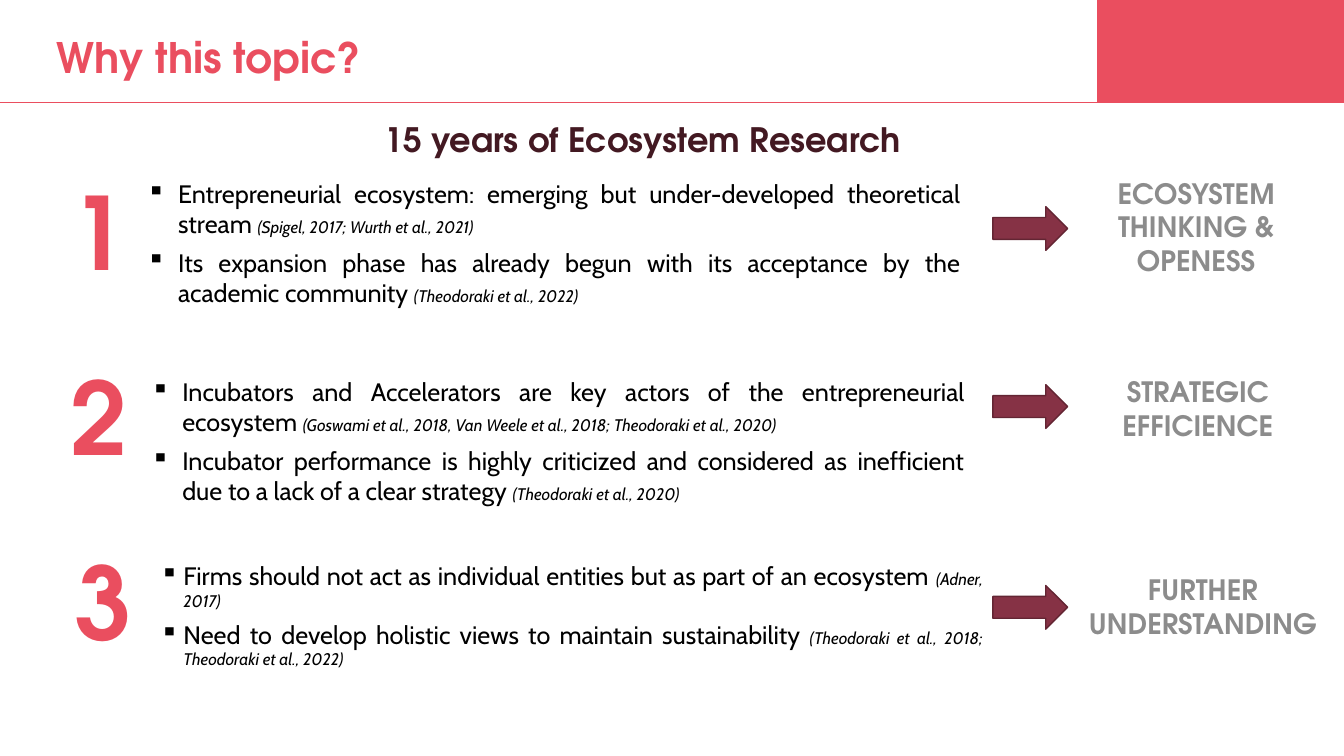
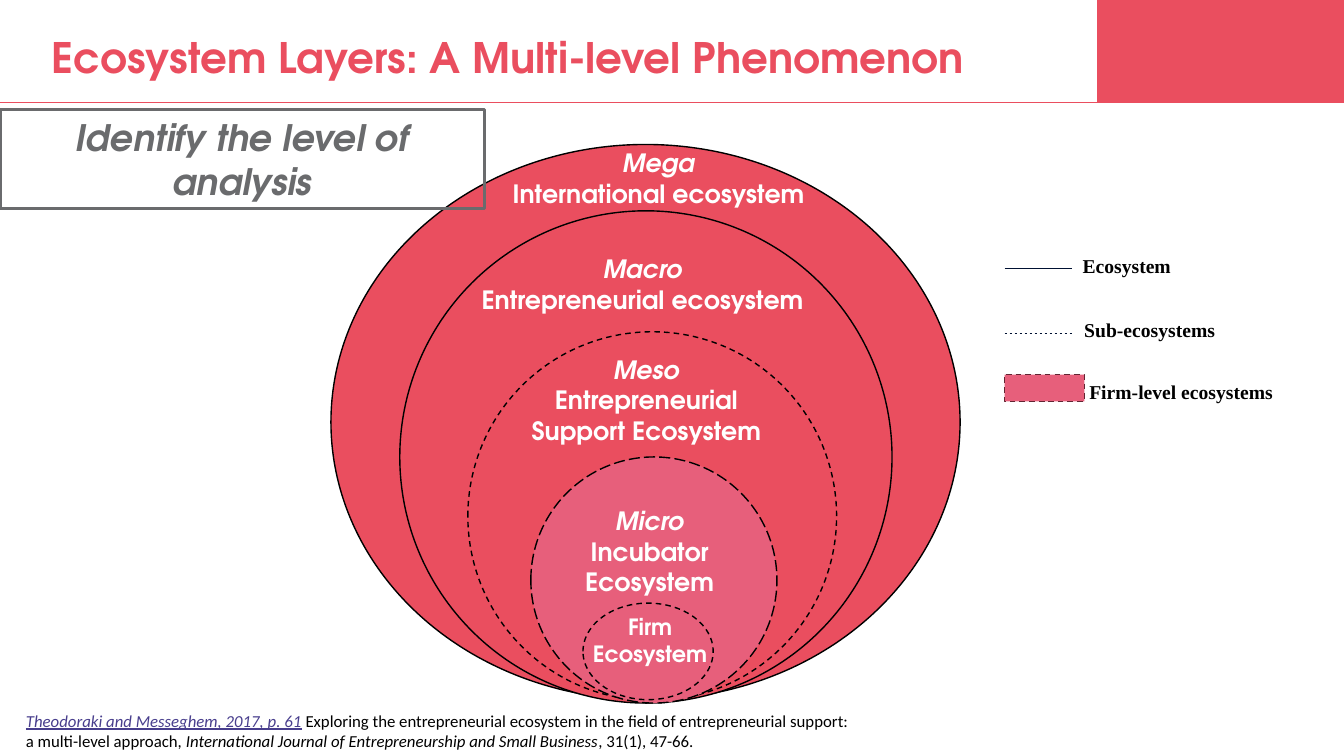
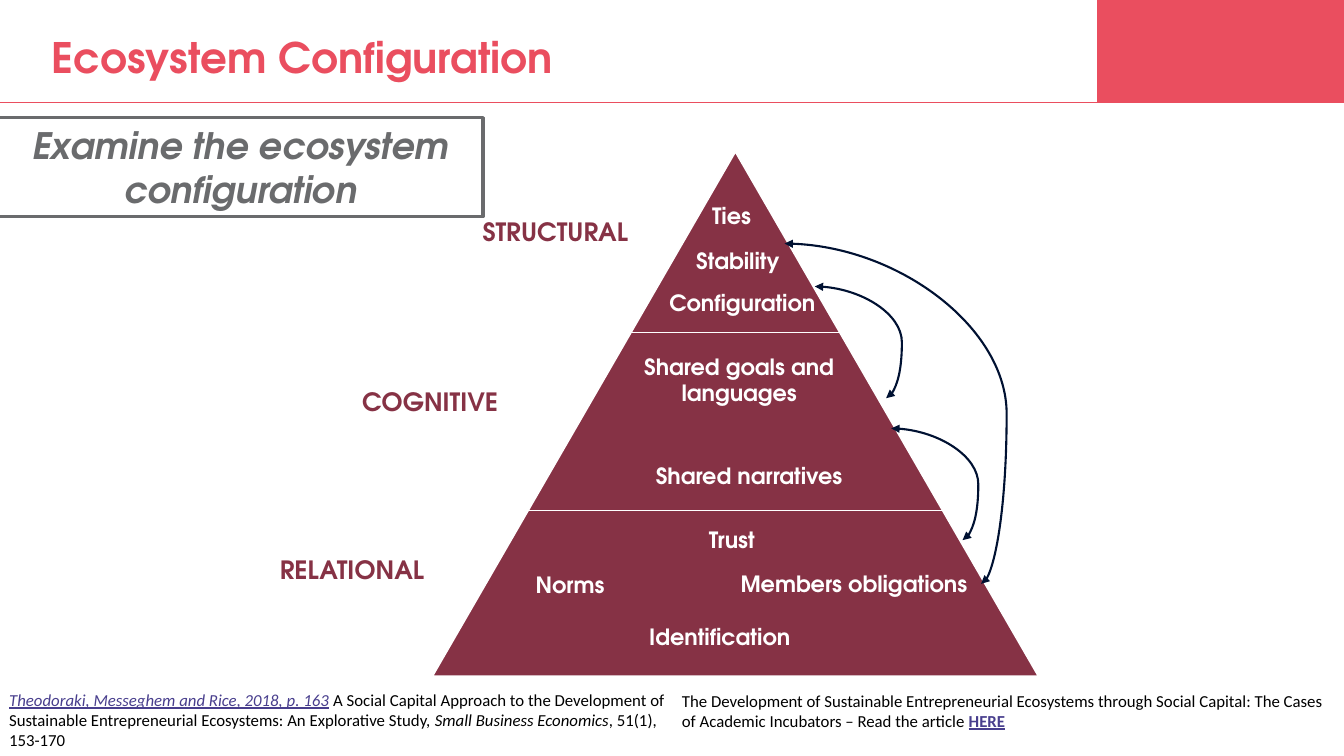
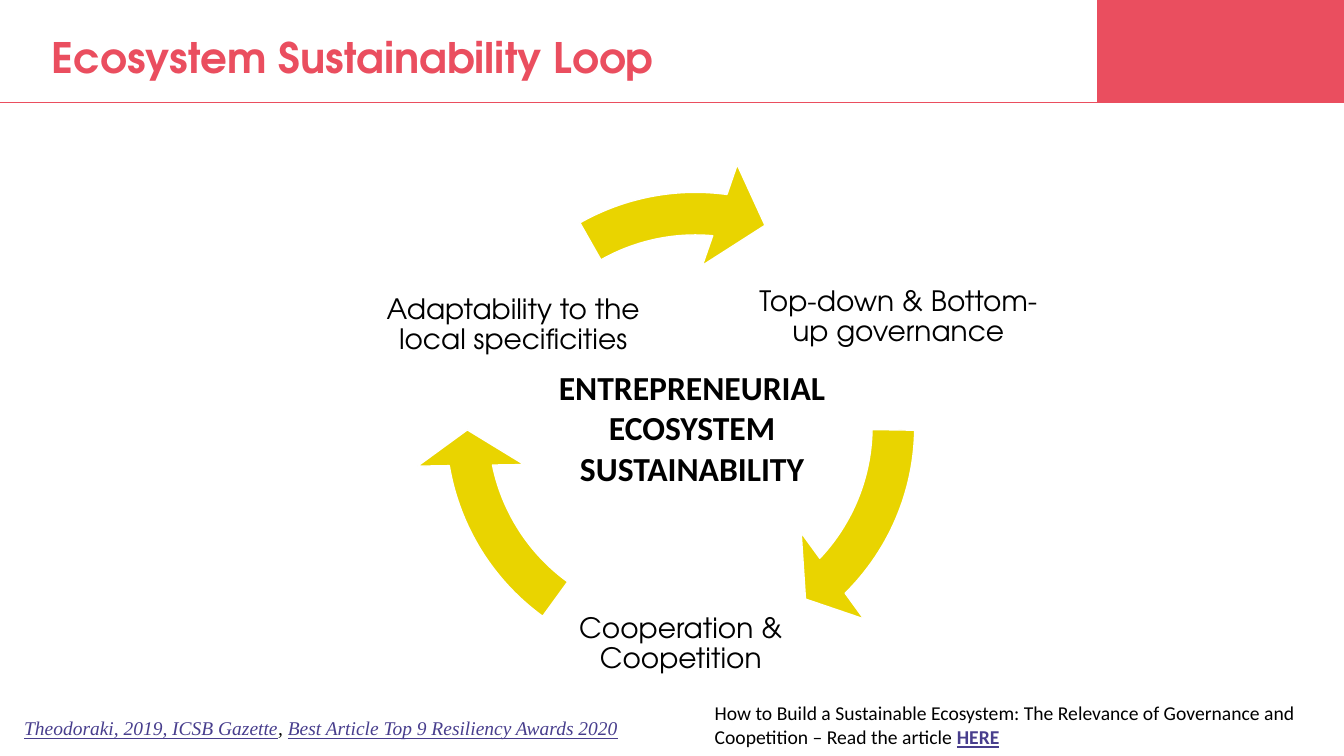
from dataclasses import dataclass
from typing import NamedTuple

from lxml import etree
from pptx import Presentation
from pptx.dml.color import RGBColor
from pptx.enum.dml import MSO_LINE
from pptx.enum.shapes import MSO_CONNECTOR, MSO_SHAPE
from pptx.enum.text import MSO_ANCHOR, PP_ALIGN
from pptx.oxml.ns import qn
from pptx.util import Emu, Inches, Pt

LEFT, CENTER, JUSTIFY = PP_ALIGN.LEFT, PP_ALIGN.CENTER, PP_ALIGN.JUSTIFY
TOP, MIDDLE = MSO_ANCHOR.TOP, MSO_ANCHOR.MIDDLE
DASH, LONG_DASH = MSO_LINE.DASH, MSO_LINE.LONG_DASH
RECTANGLE, OVAL = MSO_SHAPE.RECTANGLE, MSO_SHAPE.OVAL
TRIANGLE, RIGHT_ARROW = MSO_SHAPE.ISOSCELES_TRIANGLE, MSO_SHAPE.RIGHT_ARROW
CIRCULAR_ARROW = MSO_SHAPE.CIRCULAR_ARROW
STRAIGHT, CURVE = MSO_CONNECTOR.STRAIGHT, MSO_CONNECTOR.CURVE

COLUMNS, ROWS = 160, 90
UNIT = Inches(7.5) / ROWS
DEGREE = 0.6


@dataclass(frozen=True)
class Theme:
    coral: str = "EA4E5F"
    rose: str = "E75F7B"
    wine: str = "863245"
    wine_edge: str = "632533"
    plum: str = "431922"
    gray: str = "8C8C8C"
    slate: str = "6A6B6D"
    navy: str = "001132"
    yellow: str = "E9D400"
    link: str = "483E8D"
    white: str = "FFFFFF"
    black: str = "000000"
    display: str = "TeX Gyre Adventor"
    body: str = "Cabin"
    note: str = "Calibri"
    serif: str = "Times New Roman"


THEME = Theme()


def style(name, size, color, **extra):
    return {"name": name, "size": Pt(size), "color": color, **extra}


TITLE = style(THEME.display, 30, THEME.coral, bold=True)
HEADING = style(THEME.display, 24, THEME.plum, bold=True)
NUMBER = style(THEME.display, 72, THEME.coral, bold=True)
OUTCOME = style(THEME.display, 20, THEME.gray, bold=True)
CALLOUT = style(THEME.display, 26, THEME.slate, bold=True, italic=True)
DIMENSION = style(THEME.display, 18, THEME.wine, bold=True)
LEVEL = style(THEME.display, 18, THEME.white, bold=True)
ITEM = style(THEME.display, 16, THEME.white, bold=True)
LOOP_LABEL = style(THEME.display, 20, THEME.black)
LOOP_CENTER = style(THEME.note, 24, THEME.black, bold=True)
BULLET = style(THEME.body, 18, THEME.black)
LEGEND = style(THEME.serif, 14, THEME.black, bold=True)
NOTE = style(THEME.note, 12, THEME.black)
LARGE_NOTE = style(THEME.note, 14, THEME.black)
SERIF_NOTE = style(THEME.serif, 13.9, THEME.black, italic=True)

ITALIC = {"italic": True}
CITATION = {"italic": True, "size": Pt(12)}
LINK = {"color": THEME.link, "underline": True}
ITALIC_LINK = {**LINK, **ITALIC}
BOLD_LINK = {**LINK, "bold": True}


class Box(NamedTuple):
    left: float
    top: float
    width: float
    height: float

    def at(self, column, row, columns, rows):
        return Box(self.left + column, self.top + row, columns, rows)

    def emu(self):
        return [Emu(round(value * UNIT)) for value in self]


PAGE = Box(0, 0, COLUMNS, ROWS)


def format_font(font, values):
    for name, value in values.items():
        if name == "color":
            font.color.rgb = RGBColor.from_string(value)
        else:
            setattr(font, name, value)


def set_bullet(paragraph, indent):
    properties = paragraph._p.get_or_add_pPr()
    properties.set("marL", str(Inches(indent)))
    properties.set("indent", str(-Inches(indent)))
    etree.SubElement(properties, qn("a:buChar")).set("char", "▪")


def write(frame, paragraphs, base, anchor=TOP, bullet=None, **layout):
    frame.word_wrap = True
    frame.vertical_anchor = anchor
    for index, runs in enumerate(paragraphs):
        paragraph = frame.add_paragraph() if index else frame.paragraphs[0]
        if bullet:
            set_bullet(paragraph, bullet)
        for name, value in layout.items():
            setattr(paragraph, name, value)
        for text, changes in [(runs, {})] if isinstance(runs, str) else runs:
            run = paragraph.add_run()
            run.text = text
            format_font(run.font, {**base, **changes})


def add_text(slide, box, paragraphs, base, **layout):
    write(slide.shapes.add_textbox(*box.emu()).text_frame, paragraphs, base, **layout)


def draw_line(line, color, width, dash=None):
    line.color.rgb = RGBColor.from_string(color)
    line.width = Pt(width)
    if dash:
        line.dash_style = dash


def add_shape(slide, kind, box, fill=None, edge=None, width=1, dash=None):
    shape = slide.shapes.add_shape(kind, *box.emu())
    shape.shadow.inherit = False
    if fill:
        shape.fill.solid()
        shape.fill.fore_color.rgb = RGBColor.from_string(fill)
    else:
        shape.fill.background()
    if edge:
        draw_line(shape.line, edge, width, dash)
    else:
        shape.line.fill.background()
    return shape


def add_line(slide, box, color, width, dash=None, kind=STRAIGHT):
    left, top, across, down = box.emu()
    connector = slide.shapes.add_connector(kind, left, top, left + across, top + down)
    draw_line(connector.line, color, width, dash)
    etree.SubElement(connector._element.spPr, qn("a:effectLst"))
    return connector


def add_arc(slide, box, bulge):
    connector = add_line(slide, box, THEME.navy, 1.5, kind=CURVE)
    line = connector.line._get_or_add_ln()
    for end in ("a:headEnd", "a:tailEnd"):
        etree.SubElement(line, qn(end)).set("type", "triangle")
    geometry = connector._element.spPr.find(qn("a:prstGeom"))
    values = geometry.find(qn("a:avLst"))
    if values is None:
        values = etree.SubElement(geometry, qn("a:avLst"))
    guide = etree.SubElement(values, qn("a:gd"))
    guide.set("name", "adj1")
    guide.set("fmla", f"val {round(bulge * 100000)}")


def brand_layout(layout, slide):
    band = Box(0, 0, COLUMNS, 12.2)
    rule = add_line(slide, band.at(0, band.height, band.width, 0), THEME.coral, 1)
    block = add_shape(slide, RECTANGLE, band.at(130.6, 0, 29.4, band.height), THEME.coral)
    for part in (rule, block):
        layout.shapes._spTree.append(part._element)


def add_title(slide, text, column=5):
    add_text(slide, PAGE.at(column, 3.2, 120.6, 7.3), [text], TITLE)


def add_callout(slide, box, text):
    frame = add_shape(slide, RECTANGLE, box, edge=THEME.slate, width=2.25)
    write(frame.text_frame, [text], CALLOUT, anchor=MIDDLE, alignment=CENTER)


def add_topic(slide, box, topic):
    number_column, number_row = topic["number_at"]
    bullet_column, bullet_row, bullet_width = topic["bullets_at"]
    add_text(slide, box.at(number_column, number_row, 12.4, 15.7),
             [topic["number"]], NUMBER, alignment=CENTER)
    add_text(slide, box.at(bullet_column, bullet_row, bullet_width, 16.8),
             [[(claim, {}), (source, CITATION)] for claim, source in topic["bullets"]],
             BULLET, bullet=topic["indent"], alignment=JUSTIFY, space_after=Pt(6))
    add_shape(slide, RIGHT_ARROW, box.at(118.2, topic["arrow_row"], 8.9, 5.2),
              THEME.wine, THEME.wine_edge)
    add_text(slide, box.at(topic["outcome_column"], 0, 31.2, 13.3),
             [topic["outcome"]], OUTCOME, alignment=CENTER)


TOPICS = [
    {
        "number": "1", "number_at": (5.6, -0.8), "bullets_at": (16.3, 0.2, 99.2),
        "indent": 0.31, "arrow_row": 4.2, "outcome_column": 126.8,
        "outcome": "ECOSYSTEM THINKING & OPENESS",
        "bullets": [
            ("Entrepreneurial ecosystem: emerging but under-developed theoretical stream ",
             "(Spigel, 2017; Wurth et al., 2021)"),
            ("Its expansion phase has already begun with its acceptance by the academic "
             "community ", "(Theodoraki et al., 2022)"),
        ],
    },
    {
        "number": "2", "number_at": (5.6, -2.4), "bullets_at": (16.8, 0.2, 99.2),
        "indent": 0.31, "arrow_row": 1.8, "outcome_column": 127,
        "outcome": "STRATEGIC EFFICIENCE",
        "bullets": [
            ("Incubators and Accelerators are key actors of the entrepreneurial ecosystem ",
             "(Goswami et al., 2018, Van Weele et al., 2018; Theodoraki et al., 2020)"),
            ("Incubator performance is highly criticized and considered as inefficient due "
             "to a lack of a clear strategy ", "(Theodoraki et al., 2020)"),
        ],
    },
    {
        "number": "3", "number_at": (6.1, -3.9), "bullets_at": (17.9, -1.5, 100.3),
        "indent": 0.23, "arrow_row": 2.1, "outcome_column": 127.6,
        "outcome": "FURTHER UNDERSTANDING",
        "bullets": [
            ("Firms should not act as individual entities but as part of an ecosystem ",
             "(Adner, 2017)"),
            ("Need to develop holistic views to maintain sustainability ",
             "(Theodoraki et al., 2018; Theodoraki et al., 2022)"),
        ],
    },
]


def build_topics(slide):
    add_title(slide, "Why this topic?", 5.6)
    add_text(slide, PAGE.at(35.9, 13.6, 81.2, 6), ["15 years of Ecosystem Research"],
             HEADING, alignment=CENTER)
    for index, topic in enumerate(TOPICS):
        add_topic(slide, PAGE.at(0, 20.4 + 23.6 * index, COLUMNS, 23.6), topic)


RINGS = [
    ((0, 0, 74.9, 66.1), THEME.coral, None),
    ((8.2, 7.9, 58.6, 58.6), THEME.coral, None),
    ((16.3, 22.3, 43.9, 43.9), THEME.coral, DASH),
    ((23.8, 37.2, 29.3, 29.3), THEME.rose, LONG_DASH),
    ((30, 54.6, 15.5, 11.5), THEME.rose, DASH),
]
LEVELS = [
    ((14.5, -0.2, 49, 8.5), "Mega", "International ecosystem"),
    ((12.6, 12.4, 49, 8.5), "Macro", "Entrepreneurial ecosystem"),
    ((19.8, 24.4, 35.5, 12.1), "Meso", "Entrepreneurial Support Ecosystem"),
    ((23.2, 42.4, 29.5, 12.1), "Micro", "Incubator Ecosystem"),
]


def add_rings(slide, box):
    for place, fill, dash in RINGS:
        add_shape(slide, OVAL, box.at(*place), fill, THEME.black, dash=dash)
    for place, level, name in LEVELS:
        add_text(slide, box.at(*place), [[(level, ITALIC)], name], LEVEL, alignment=CENTER)
    add_text(slide, box.at(29.1, 55.2, 17.8, 7.7), ["Firm Ecosystem"], ITEM, alignment=CENTER)


def add_legend(slide, box):
    pitch = 7.7
    for index, dash in enumerate([None, DASH]):
        add_line(slide, box.at(0, 2.4 + pitch * index, 8, 0), THEME.navy, 0.5, dash)
    add_shape(slide, RECTANGLE, box.at(0, 15, 9.5, 3.2), THEME.rose, THEME.wine_edge, dash=DASH)
    labels = [(9.2, 0, "Ecosystem"), (9.4, pitch, "Sub-ecosystems"),
              (9, 15, "Firm-level ecosystems")]
    for column, row, label in labels:
        add_text(slide, box.at(column - 1.1 + (row == 15), row, 25, 4.1), [label], LEGEND)


def build_layers(slide):
    add_title(slide, "Ecosystem Layers: A Multi-level Phenomenon")
    add_rings(slide, PAGE.at(39.4, 17.2, 74.9, 66.1))
    add_legend(slide, PAGE.at(119.6, 29.6, 34, 19))
    add_callout(slide, PAGE.at(0, 13, 57.7, 11.8), "Identify the level of analysis")
    add_text(slide, PAGE.at(1.9, 84, 101.5, 6), [[
        ("Theodoraki and Messeghem, 2017, p. 61", ITALIC_LINK),
        (" Exploring the entrepreneurial ecosystem in the field of entrepreneurial "
         "support: a multi-level approach, ", {}),
        ("International Journal of Entrepreneurship and Small Business", ITALIC),
        (", 31(1), 47-66.", {}),
    ]], NOTE)


PYRAMID_ITEMS = [
    (32.1, 5.4, "Ties", LEFT),
    (30.2, 10.7, "Stability", LEFT),
    (27, 15.7, "Configuration", LEFT),
    (21.5, 23.3, "Shared goals and languages", CENTER),
    (25.4, 36.3, "Shared narratives", LEFT),
    (31.7, 43.9, "Trust", LEFT),
    (11.1, 49.3, "Norms", LEFT),
    (35.5, 49.2, "Members obligations", LEFT),
    (24.6, 55.5, "Identification", LEFT),
]
DIMENSIONS = [
    (1.8, 7.1, "STRUCTURAL"),
    (-13.1, 27.3, "COGNITIVE"),
    (-22.4, 47.3, "RELATIONAL"),
]
ARCS = [
    ((41.9, 10.9, 23.4, 40.5), 1.13),
    ((54.6, 32.9, 8.5, 13.3), 1.22),
    ((45.5, 16, 8.5, 13.3), 1.22),
]


def add_pyramid(slide, box):
    add_shape(slide, TRIANGLE, box, THEME.wine, THEME.white)
    for row in (21.5, 42.6):
        width = box.width * row / box.height
        add_line(slide, box.at((box.width - width) / 2, row, width, 0), THEME.white, 0.5)
    for column, row, item, alignment in PYRAMID_ITEMS:
        add_text(slide, box.at(column, row, 30, 4.4), [item], ITEM, alignment=alignment)
    for column, row, dimension in DIMENSIONS:
        add_text(slide, box.at(column, row, 25.6, 4.8), [dimension], DIMENSION,
                 alignment=CENTER)
    for place, bulge in ARCS:
        add_arc(slide, box.at(*place), bulge)


def build_configuration(slide):
    add_title(slide, "Ecosystem Configuration")
    add_pyramid(slide, PAGE.at(51.5, 18.1, 72.1, 62.4))
    add_callout(slide, PAGE.at(-0.2, 14, 57.7, 11.8), "Examine the ecosystem configuration")
    add_text(slide, PAGE.at(-0.1, 81.5, 81.7, 8.5), [[
        ("Theodoraki, Messeghem and Rice, 2018, p. 163", ITALIC_LINK),
        (" A Social Capital Approach to the Development of Sustainable Entrepreneurial "
         "Ecosystems: An Explorative Study, ", {}),
        ("Small Business Economics", ITALIC),
        (", 51(1), 153-170", {}),
    ]], NOTE)
    add_text(slide, PAGE.at(80, 81.6, 80, 6), [[
        ("The Development of Sustainable Entrepreneurial Ecosystems through Social "
         "Capital: The Cases of Academic Incubators – Read the article ", {}),
        ("HERE", BOLD_LINK),
    ]], NOTE)


LOOP_ARROWS = [
    (0, 9.6, 44.42, 0.86),
    (0, 9.6, 169.54, 125.98),
    (1.8, 12.49, 276.57, 240.46),
]
LOOP_LABELS = [
    ((38.2, 5.3, 38.9, 26.8), "Top-down & Bottom-up governance"),
    ((15.6, 44.3, 32.3, 26.6), "Cooperation & Coopetition"),
    ((-7.4, 6.2, 38.4, 26.8), "Adaptability to the local specificities"),
]


def add_loop(slide, box):
    for column, head, end, start in LOOP_ARROWS:
        arrow = add_shape(slide, CIRCULAR_ARROW, box.at(column, 0, box.width, box.height),
                          THEME.yellow, THEME.white)
        values = (0.08, head * DEGREE, end * DEGREE, start * DEGREE, 0.1)
        for index, value in enumerate(values):
            arrow.adjustments[index] = value
    for place, label in LOOP_LABELS:
        add_text(slide, box.at(*place), [label], LOOP_LABEL, anchor=MIDDLE,
                 alignment=CENTER, line_spacing=0.9)
    add_text(slide, box.at(15.1, 24, 36, 12.2), ["ENTREPRENEURIAL ECOSYSTEM SUSTAINABILITY"],
             LOOP_CENTER, alignment=CENTER)


def build_loop(slide):
    add_title(slide, "Ecosystem Sustainability Loop")
    add_loop(slide, PAGE.at(49.3, 19.1, 63.4, 63.4))
    add_text(slide, PAGE.at(1.7, 84.7, 74.4, 4.2), [[
        ("Theodoraki, 2019, ICSB Gazette", LINK),
        (", ", {}),
        ("Best Article Top 9 Resiliency Awards 2020", LINK),
    ]], SERIF_NOTE)
    add_text(slide, PAGE.at(83.9, 82.9, 76.1, 6.9), [[
        ("How to Build a Sustainable Ecosystem: The Relevance of Governance and "
         "Coopetition – Read the article ", {}),
        ("HERE", BOLD_LINK),
    ]], LARGE_NOTE)


def main():
    presentation = Presentation()
    presentation.slide_width = Emu(round(COLUMNS * UNIT))
    presentation.slide_height = Emu(round(ROWS * UNIT))
    blank = presentation.slide_layouts[6]
    builders = (build_topics, build_layers, build_configuration, build_loop)
    for index, build in enumerate(builders):
        slide = presentation.slides.add_slide(blank)
        if index == 0:
            brand_layout(blank, slide)
        build(slide)
    presentation.save("out.pptx")


if __name__ == "__main__":
    main()
